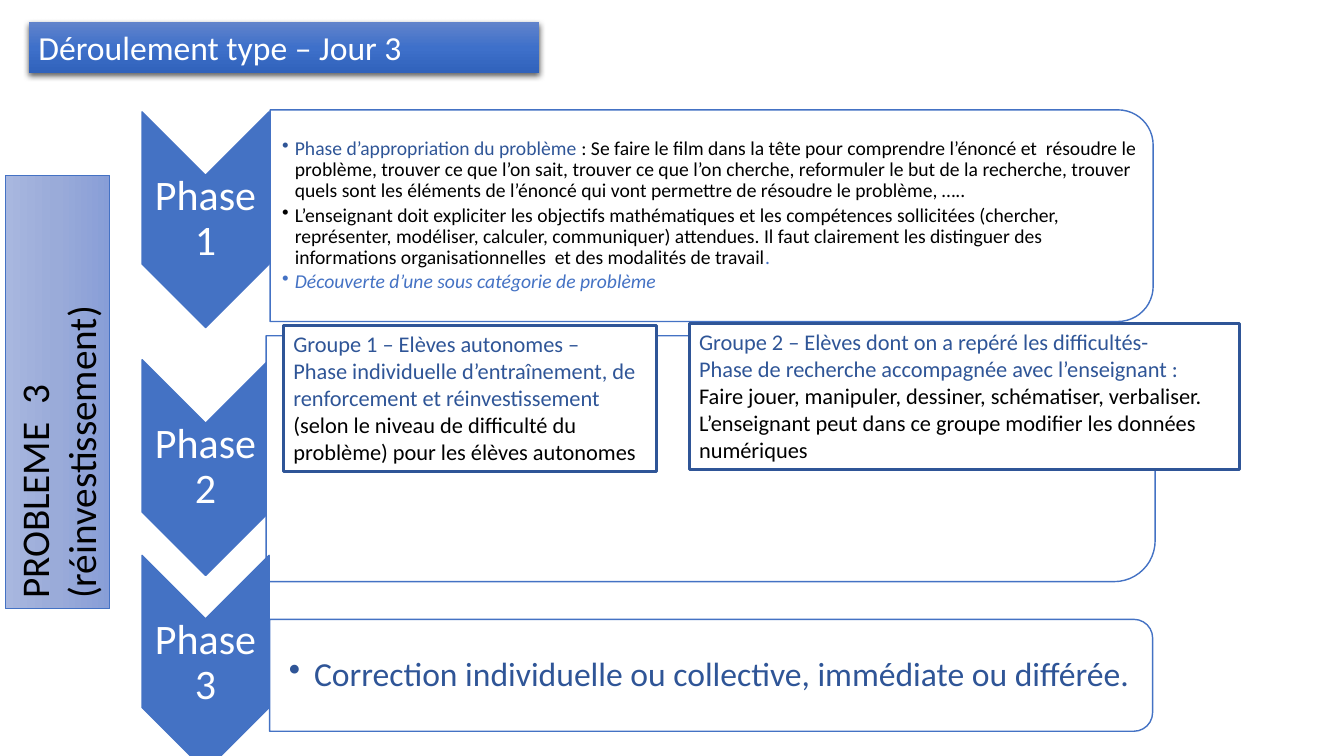
import copy
from dataclasses import dataclass

import lxml.etree
import pptx
import pptx.dml.color
import pptx.enum.shapes
import pptx.enum.text
import pptx.oxml
import pptx.oxml.ns
import pptx.util

Pt = pptx.util.Pt
RGB = pptx.dml.color.RGBColor.from_string
SHAPE = pptx.enum.shapes.MSO_SHAPE
ANCHOR = pptx.enum.text.MSO_ANCHOR
ALIGN = pptx.enum.text.PP_ALIGN
qn = pptx.oxml.ns.qn


@dataclass(frozen=True)
class Theme:
    font: str = "Calibri"
    blue: str = "4472C4"
    navy: str = "2F5597"
    black: str = "000000"
    white: str = "FFFFFF"
    title_fade: tuple = ("6183CB", "3E70CA", "3062BB")
    problem_fade: tuple = ("A8B7DF", "9AABD9", "889ED7")
    title_size: float = 24
    problem_size: float = 28
    phase_size: float = 30
    detail_size: float = 14
    group_size: float = 16
    correction_size: float = 24


theme = Theme()
deck = pptx.Presentation()
deck.slide_width, deck.slide_height = Pt(960), Pt(540)
slide = deck.slides.add_slide(deck.slide_layouts[6])


def add_box(kind, bounds, fill, line=None, weight=1, rotation=0):
    """Add a shape by its visible bounds; a tuple as fill makes a gradient."""
    left, top, width, height = bounds
    if rotation in (90, 270):
        left, top = left + (width - height) / 2, top + (height - width) / 2
        width, height = height, width
    box = slide.shapes.add_shape(kind, Pt(left), Pt(top), Pt(width), Pt(height))
    box.rotation = rotation
    box.shadow.inherit = False
    if isinstance(fill, tuple):
        box.fill.gradient()
        box.fill.gradient_angle = 270
        stops = box._element.spPr.find(".//" + qn("a:gsLst"))
        stops.insert(1, copy.deepcopy(stops[0]))
        for stop, color, position in zip(box.fill.gradient_stops, fill, (0, 0.5, 1)):
            stop.color.rgb, stop.position = RGB(color), position
    else:
        box.fill.solid()
        box.fill.fore_color.rgb = RGB(fill)
    if line:
        box.line.color.rgb, box.line.width = RGB(line), Pt(weight)
    else:
        box.line.fill.background()
    return box


def write(box, paragraphs, size, anchor=ANCHOR.TOP, align=ALIGN.LEFT,
          insets=(7.2, 3.6, 7.2, 3.6), spacing=None, hang=0):
    """Fill a shape with paragraphs, each a list of (text, color); hang adds bullets."""
    frame = box.text_frame
    frame.word_wrap, frame.vertical_anchor = True, anchor
    (frame.margin_left, frame.margin_top,
     frame.margin_right, frame.margin_bottom) = map(Pt, insets)
    for index, runs in enumerate(paragraphs):
        paragraph = frame.add_paragraph() if index else frame.paragraphs[0]
        paragraph.alignment = align
        paragraph.font.name, paragraph.font.size = theme.font, Pt(size)
        if spacing:
            paragraph.line_spacing = spacing
        for text, color in runs:
            run = paragraph.add_run()
            run.text = text
            font = paragraph.font if len(runs) == 1 else run.font
            font.color.rgb = RGB(color)
        if hang:
            paragraph.space_after = Pt(size * 0.15)
            properties = paragraph._p.get_or_add_pPr()
            properties.set("marL", str(Pt(hang)))
            properties.set("indent", str(Pt(-hang)))
            bullet = lxml.etree.Element(qn("a:buChar"), char="•")
            properties.insert_element_before(bullet, "a:tabLst", "a:defRPr", "a:extLst")


# Problem banner on the left, reading upwards
problem = add_box(SHAPE.RECTANGLE, (3.6, 125.3, 74.9, 309.6), theme.problem_fade,
                  theme.blue, 0.5, rotation=270)
write(problem, [[("PROBLEME  3 (réinvestissement)", theme.black)]], theme.problem_size)

# Title bar with its shadow
title = add_box(SHAPE.RECTANGLE, (20.4, 16, 364.5, 36.3), theme.title_fade)
write(title, [[("Déroulement type – Jour 3", theme.white)]], theme.title_size)
title._element.spPr.find(qn("a:effectLst")).append(pptx.oxml.parse_xml(
    f'<a:outerShdw {pptx.oxml.ns.nsdecls("a")} blurRad="{Pt(4.5)}" dist="{Pt(1.5)}" '
    f'dir="5400000" rotWithShape="0"><a:srgbClr val="{theme.black}">'
    '<a:alpha val="63000"/></a:srgbClr></a:outerShdw>'))

# Phases: chevron, label and panel
phases = [
    # chevron top, panel bounds, panel opacity
    (79.9, (193, 78.5, 630.7, 151.2), 90),
    (257, (190.1, 239.8, 635, 175.7), 100),
    (396.7, (192.6, 442.4, 630.7, 79.9), 90),
]
for number, (top, panel_bounds, opacity) in enumerate(phases, 1):
    add_box(SHAPE.CHEVRON, (101.5, top, 90.7, 154.1), theme.blue, theme.blue, rotation=90)
    label = slide.shapes.add_textbox(Pt(101.5), Pt(top + 54), Pt(90.7), Pt(46))
    write(label, [[(f"Phase {number}", theme.white)]], theme.phase_size,
          ANCHOR.MIDDLE, ALIGN.CENTER, (1.4,) * 4, 0.9)
    panel = add_box(SHAPE.ROUND_2_SAME_RECTANGLE, panel_bounds, theme.white,
                    theme.blue, rotation=90)
    if opacity < 100:
        color = panel._element.spPr.find(qn("a:solidFill"))[0]
        lxml.etree.SubElement(color, qn("a:alpha"), val=str(opacity * 1000))

# Phase 1 details
details = slide.shapes.add_textbox(Pt(193.7), Pt(85.7), Pt(625), Pt(136.8))
write(details, [
    [("Phase d’appropriation du problème ", theme.navy),
     (": Se faire le film dans la tête pour comprendre l’énoncé et  résoudre le problème, "
      "trouver ce que l’on sait, trouver ce que l’on cherche, reformuler le but de la "
      "recherche, trouver quels sont les éléments de l’énoncé qui vont permettre de "
      "résoudre le problème, …..", theme.black)],
    [("L’enseignant doit expliciter les objectifs mathématiques et les compétences "
      "sollicitées (chercher, représenter, modéliser, calculer, communiquer) attendues. "
      "Il faut clairement les distinguer des informations organisationnelles  et des "
      "modalités de travail", theme.black), (".", theme.blue)],
    [("Découverte d’une sous catégorie de problème", theme.blue)],
], theme.detail_size, ANCHOR.MIDDLE, insets=(7.9, 0.7, 0.7, 0.7), spacing=0.9, hang=9)
details.text_frame.paragraphs[-1].font.italic = True

# Phase 3 correction
correction = slide.shapes.add_textbox(Pt(192.6), Pt(446.4), Pt(627.8), Pt(72))
write(correction, [[("Correction individuelle ou collective, immédiate ou différée.",
                     theme.navy)]],
      theme.correction_size, ANCHOR.MIDDLE, insets=(13.7, 1.4, 1.4, 1.4),
      spacing=0.9, hang=18)

# Phase 2 groups
groups = [
    ((202.5, 232.4, 266.4, 104.6), [
        [("Groupe 1 – Elèves autonomes –", theme.navy)],
        [("Phase individuelle d’entraînement, de renforcement et réinvestissement ",
          theme.navy),
         ("(selon le niveau de difficulté du problème) pour les élèves autonomes",
          theme.black)]]),
    ((492.3, 231, 393.1, 104.6), [
        [("Groupe 2 – Elèves dont on a repéré les difficultés-", theme.navy)],
        [("Phase de recherche accompagnée avec l’enseignant :", theme.navy)],
        [("Faire jouer, manipuler, dessiner, schématiser, verbaliser. L’enseignant peut "
          "dans ce groupe modifier les données numériques", theme.black)]]),
]
for bounds, paragraphs in groups:
    group = add_box(SHAPE.RECTANGLE, bounds, theme.white, theme.navy, 2.25)
    write(group, paragraphs, theme.group_size)

deck.save("out.pptx")
